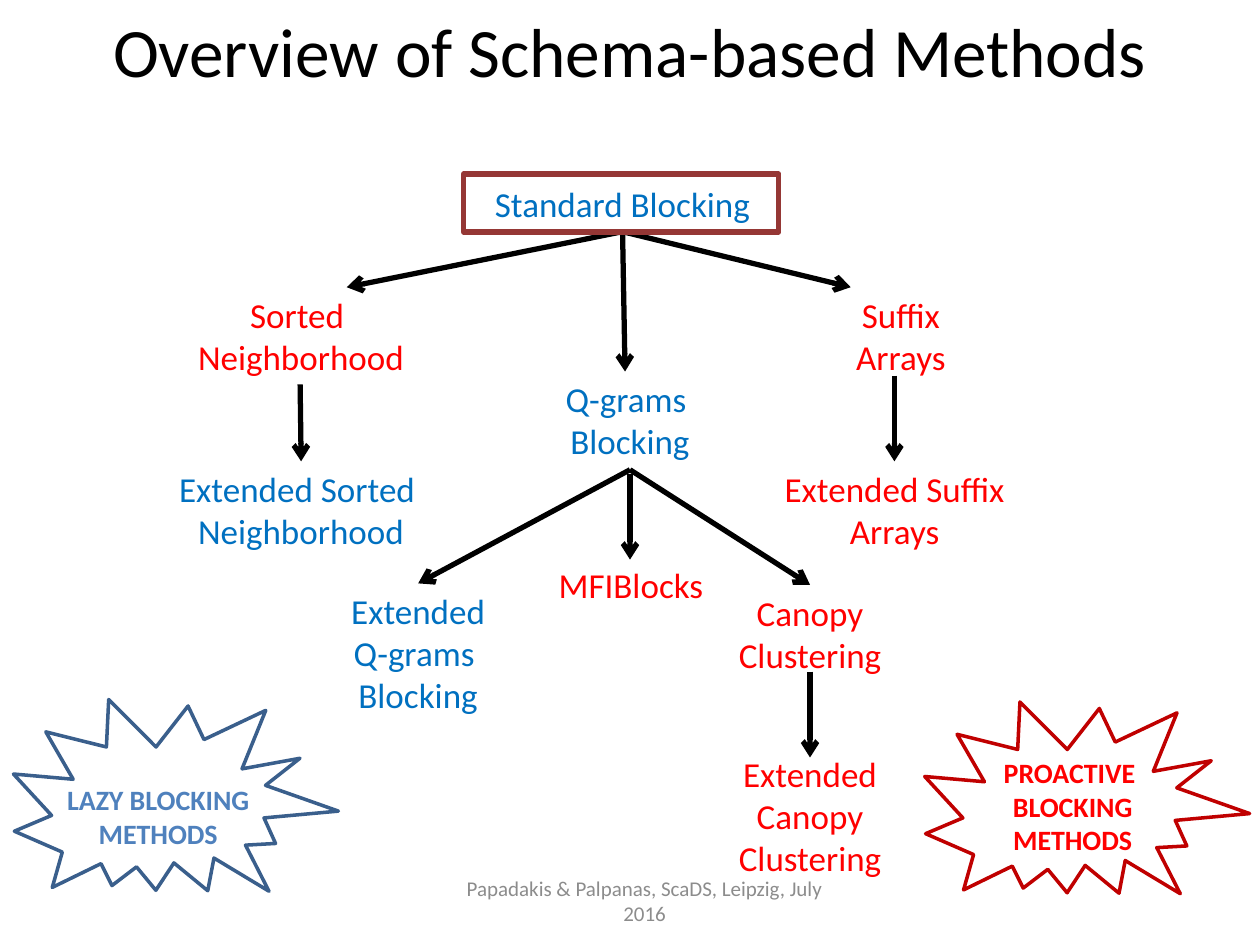
from lxml import etree
from pptx import Presentation
from pptx.dml.color import RGBColor
from pptx.enum import shapes, text
from pptx.oxml import ns
from pptx.util import Cm, Pt

BLACK = RGBColor(0x00, 0x00, 0x00)
GREY = RGBColor(0x8C, 0x8C, 0x8C)
BLUE = RGBColor(0x00, 0x70, 0xC0)
RED = RGBColor(0xFF, 0x00, 0x00)
LAZY_BLUE = RGBColor(0x4F, 0x81, 0xBD)
LAZY_EDGE = RGBColor(0x3A, 0x5F, 0x8C)
PROACTIVE_EDGE = RGBColor(0xC0, 0x00, 0x00)
ROOT_EDGE = RGBColor(0x95, 0x37, 0x35)

TOP, MIDDLE = text.MSO_ANCHOR.TOP, text.MSO_ANCHOR.MIDDLE
RECTANGLE = shapes.MSO_SHAPE.RECTANGLE
BURST = shapes.MSO_SHAPE.EXPLOSION2

deck = Presentation()
deck.slide_width, deck.slide_height = Cm(25.4), Cm(19.05)
page = deck.slides.add_slide(deck.slide_layouts[6])


def add_label(place, lines, color, size=20, anchor=TOP, bold=False, wrap=True):
    """Add centred text, one paragraph per line; place is left, top, width, height in cm."""
    box = page.shapes.add_textbox(*map(Cm, place))
    frame = box.text_frame
    frame.word_wrap = wrap
    frame.vertical_anchor = anchor
    frame.text = "\n".join(lines)
    font_format = {"name": "Calibri", "size": Pt(size), "bold": bold}
    for para in frame.paragraphs:
        para.alignment = text.PP_ALIGN.CENTER
        for span in para.runs:
            for name, value in font_format.items():
                setattr(span.font, name, value)
            span.font.color.rgb = color


# Tree of methods
methods = [
    ((0, 3.56, 25.1, 1.12), ["Standard Blocking"], BLUE),
    ((3.68, 5.79, 4.78, 1.96), ["Sorted ", "Neighborhood"], RED),
    ((3.35, 9.3, 5.44, 1.96), ["Extended Sorted ", "Neighborhood"], BLUE),
    ((11, 7.49, 3.4, 1.96), ["Q-grams ", "Blocking"], BLUE),
    ((6.73, 11.76, 3.4, 2.82), ["Extended Q-grams ", "Blocking"], BLUE),
    ((10.8, 11.23, 3.84, 1.12), ["MFIBlocks"], RED),
    ((16.46, 5.79, 3.4, 1.96), ["Suffix", "Arrays"], RED),
    ((15.42, 9.3, 5.23, 1.96), ["Extended Suffix", "Arrays"], RED),
    ((14.63, 11.79, 3.4, 1.96), ["Canopy", "Clustering"], RED),
    ((14.63, 15.04, 3.4, 2.82), ["Extended", "Canopy", "Clustering"], RED),
]
for place, lines, color in methods:
    add_label(place, lines, color)

# Arrows from each method to those derived from it
root, q_grams = (12.55, 4.67), (12.7, 9.47)
arrows = [
    (root, (6.99, 5.79)),
    (root, (12.6, 7.49)),
    (root, (17.15, 5.79)),
    ((6.05, 7.75), (6.07, 9.3)),
    ((18.03, 7.57), (18.03, 9.3)),
    (q_grams, (8.43, 11.76)),
    ((12.7, 9.55), (12.7, 11.28)),
    (q_grams, (16.33, 11.79)),
    ((16.33, 13.54), (16.33, 15.27)),
]
for start, end in arrows:
    arrow = page.shapes.add_connector(
        shapes.MSO_CONNECTOR.STRAIGHT, *map(Cm, start + end))
    arrow.line.color.rgb = BLACK
    arrow.line.width = Pt(3)
    etree.SubElement(arrow.line._get_or_add_ln(), ns.qn("a:tailEnd"), type="arrow")
    etree.SubElement(arrow._element.spPr, ns.qn("a:effectLst"))

# Title and footer
add_label((0, 0, 25.4, 2.01), ["Overview of Schema-based Methods"], BLACK, 39.6, MIDDLE)
add_label((8.69, 17.65, 8.61, 1.02),
          ["Papadakis & Palpanas, ScaDS, Leipzig, July 2016"], GREY, 12, MIDDLE)

# Legend captions
captions = [
    ((1.07, 15.65, 4.24, 1.63), ["LAZY BLOCKING", "METHODS"], LAZY_BLUE),
    ((19.96, 15.11, 3.33, 2.31), ["PROACTIVE ", "BLOCKING", "METHODS"], RED),
]
for place, lines, color in captions:
    add_label(place, lines, color, 16, bold=True, wrap=False)

# Root frame and legend bursts
outlines = [
    (RECTANGLE, (9.35, 3.51, 6.35, 1.17), 0, ROOT_EDGE, 3),
    (BURST, (0.25, 13.82, 6.45, 4.75), 18.5, LAZY_EDGE, 2),
    (BURST, (18.62, 13.87, 6.45, 4.75), 18.5, PROACTIVE_EDGE, 2),
]
for kind, place, rotation, color, width in outlines:
    outline = page.shapes.add_shape(kind, *map(Cm, place))
    outline.rotation = rotation
    outline.shadow.inherit = False
    outline.fill.background()
    outline.line.color.rgb = color
    outline.line.width = Pt(width)

deck.save("out.pptx")
